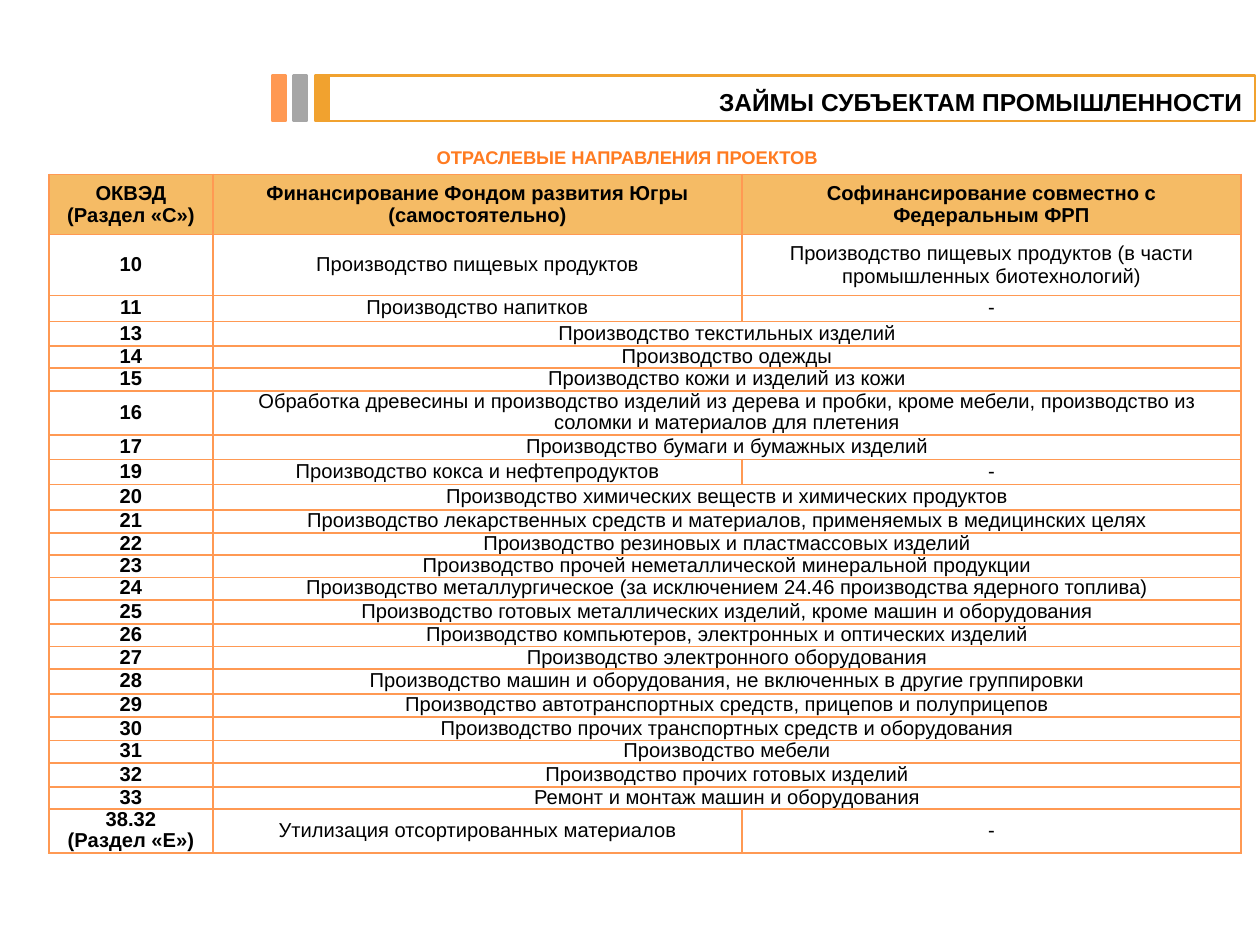
from lxml import etree
from pptx import Presentation
from pptx.dml.color import RGBColor
from pptx.enum import shapes, text
from pptx.oxml import ns
from pptx.util import Pt

BLACK = RGBColor(0, 0, 0)
WHITE = RGBColor(255, 255, 255)
GOLD = RGBColor(0xF1, 0xA2, 0x2F)
PALE_GOLD = RGBColor(0xF5, 0xBB, 0x65)
GREY = RGBColor(0xA6, 0xA6, 0xA6)
ORANGE = RGBColor(0xFF, 0x99, 0x53)
DEEP_ORANGE = RGBColor(0xFF, 0x7B, 0x21)
FONT = "Arial"

COLUMN_WIDTHS = [93.6, 302.4, 285.1]
HEADER_HEIGHT = 34.5
HEADER = ["ОКВЭД\n(Раздел «С»)",
          "Финансирование Фондом развития Югры (самостоятельно)",
          "Софинансирование совместно с Федеральным ФРП"]
# Row height, code, own funding, co-funding (absent when both share one cell)
INDUSTRIES = [
    (34.8, "10", "Производство пищевых продуктов",
     "Производство пищевых продуктов (в части промышленных биотехнологий)"),
    (14.9, "11", "Производство напитков", "-"),
    (14, "13", "Производство текстильных изделий"),
    (12.6, "14", "Производство одежды"),
    (13.1, "15", "Производство кожи и изделий из кожи"),
    (25.1, "16", "Обработка древесины и производство изделий из дерева и пробки, "
     "кроме мебели, производство из соломки и материалов для плетения"),
    (14, "17", "Производство бумаги и бумажных изделий"),
    (14.3, "19", "Производство кокса и нефтепродуктов", "-"),
    (14.6, "20", "Производство химических веществ и химических продуктов"),
    (13.1, "21", "Производство лекарственных средств и материалов, "
     "применяемых в медицинских целях"),
    (12.6, "22", "Производство резиновых и пластмассовых изделий"),
    (12.9, "23", "Производство прочей неметаллической минеральной продукции"),
    (12.9, "24", "Производство металлургическое (за исключением 24.46 "
     "производства ядерного топлива)"),
    (13.7, "25", "Производство готовых металлических изделий, кроме машин и оборудования"),
    (12.9, "26", "Производство компьютеров, электронных и оптических изделий"),
    (12.9, "27", "Производство электронного оборудования"),
    (14.3, "28", "Производство машин и оборудования, не включенных в другие группировки"),
    (13.1, "29", "Производство автотранспортных средств, прицепов и полуприцепов"),
    (13.4, "30", "Производство прочих транспортных средств и оборудования"),
    (12.9, "31", "Производство мебели"),
    (13.7, "32", "Производство прочих готовых изделий"),
    (12.6, "33", "Ремонт и монтаж машин и оборудования"),
    (25.1, "38.32\n(Раздел «Е»)", "Утилизация отсортированных материалов", "-"),
]


def write(frame, content, size, align, color=BLACK, bold=True, spacing=None):
    frame.word_wrap = True
    frame.text = content
    for paragraph in frame.paragraphs:
        paragraph.alignment = align
        if spacing:
            paragraph.line_spacing = Pt(spacing)
        font = paragraph.font
        font.name, font.size, font.bold = FONT, Pt(size), bold
        font.color.rgb = color


def set_margins(holder, left, top, right, bottom):
    holder.margin_left, holder.margin_top = Pt(left), Pt(top)
    holder.margin_right, holder.margin_bottom = Pt(right), Pt(bottom)


def add_bar(group, left, top, width, height, line, fill=None):
    bar = group.shapes.add_shape(shapes.MSO_SHAPE.RECTANGLE,
                                 Pt(left), Pt(top), Pt(width), Pt(height))
    bar.shadow.inherit = False
    if fill is None:
        bar.fill.background()
    else:
        bar.fill.solid()
        bar.fill.fore_color.rgb = fill
    bar.line.color.rgb = line
    bar.line.width = Pt(1.25)
    return bar


def add_title(slide, left, top, width, height):
    """Outlined heading with three coloured stripes at its left end."""
    stripe, step = 7.9, 12.25
    heading_left = left + 2 * step + stripe
    group = slide.shapes.add_group_shape()
    heading = add_bar(group, heading_left, top, left + width - heading_left, height, GOLD)
    frame = heading.text_frame
    set_margins(frame, 7.2, 3.6, 7.2, 0)
    frame.vertical_anchor = text.MSO_ANCHOR.MIDDLE
    write(frame, "ЗАЙМЫ СУБЪЕКТАМ ПРОМЫШЛЕННОСТИ", 14, text.PP_ALIGN.RIGHT)
    for i, color in enumerate([ORANGE, GREY, GOLD]):
        add_bar(group, left + i * step, top, stripe, height, color, color)


def add_subtitle(slide, left, top, width, height):
    subtitle = slide.shapes.add_textbox(Pt(left), Pt(top), Pt(width), Pt(height))
    write(subtitle.text_frame, "ОТРАСЛЕВЫЕ НАПРАВЛЕНИЯ ПРОЕКТОВ", 10.5,
          text.PP_ALIGN.CENTER, DEEP_ORANGE)


def set_borders(cell):
    properties = cell._tc.get_or_add_tcPr()
    for side in ("a:lnL", "a:lnR", "a:lnT", "a:lnB"):
        line = etree.SubElement(properties, ns.qn(side), w=str(Pt(1)))
        fill = etree.SubElement(line, ns.qn("a:solidFill"))
        etree.SubElement(fill, ns.qn("a:srgbClr"), val=str(ORANGE))


def add_industries(slide, left, top, width, height):
    rows = [(HEADER_HEIGHT, *HEADER), *INDUSTRIES]
    table = slide.shapes.add_table(len(rows), len(COLUMN_WIDTHS), Pt(left), Pt(top),
                                   Pt(width), Pt(height)).table
    table.first_row = table.horz_banding = False
    for column, column_width in zip(table.columns, COLUMN_WIDTHS):
        column.width = Pt(column_width)

    for r, (row_height, *contents) in enumerate(rows):
        table.rows[r].height = Pt(row_height)
        for c in range(len(COLUMN_WIDTHS)):
            cell = table.cell(r, c)
            set_borders(cell)
            cell.fill.solid()
            cell.fill.fore_color.rgb = PALE_GOLD if r == 0 else WHITE
        if len(contents) == 2:
            table.cell(r, 1).merge(table.cell(r, 2))
        for c, content in enumerate(contents):
            cell = table.cell(r, c)
            cell.vertical_anchor = text.MSO_ANCHOR.MIDDLE
            # The header and the long co-funding entry keep roomy margins
            roomy = r == 0 or (r == 1 and c == 2)
            if not roomy:
                set_margins(cell, 4.3, 0, 4.3, 0)
            write(cell.text_frame, content, 11.5, text.PP_ALIGN.CENTER,
                  bold=r == 0 or c == 0, spacing=None if roomy else 12)


def main():
    deck = Presentation()
    deck.slide_width, deck.slide_height = Pt(720), Pt(540)
    slide = deck.slides.add_slide(deck.slide_layouts[6])
    add_industries(slide, 28, 99.6, 681.1, 388.5)
    add_title(slide, 155.5, 43.2, 561.6, 25.9)
    add_subtitle(slide, 0, 80, 717, 20)
    deck.save("out.pptx")


if __name__ == "__main__":
    main()
